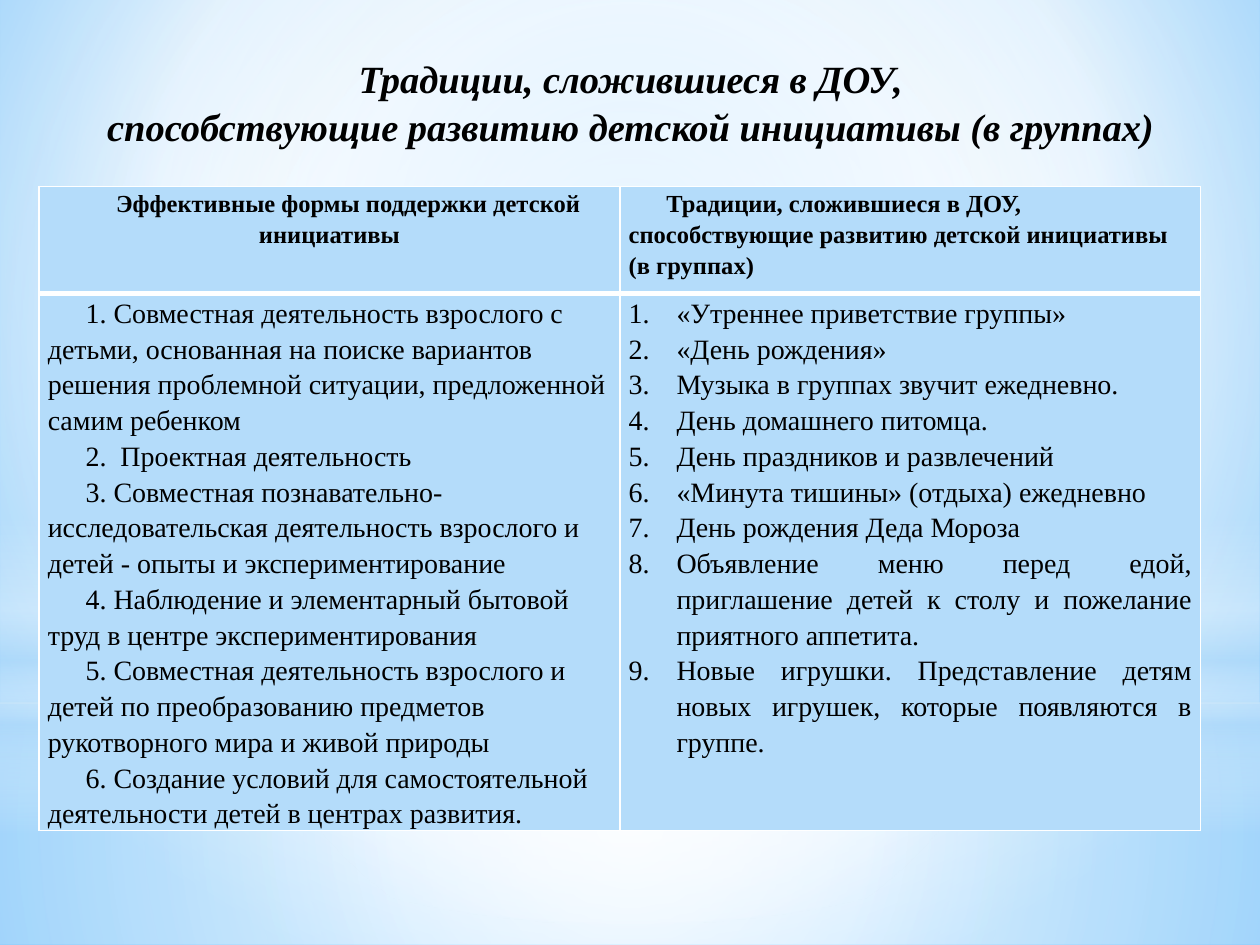
from lxml import etree
from pptx import Presentation
from pptx.dml.color import RGBColor
from pptx.enum import shapes, text
from pptx.oxml import parse_xml
from pptx.oxml.ns import nsdecls, qn
from pptx.util import Inches, Pt

BLACK = RGBColor(0x00, 0x00, 0x00)
WHITE = RGBColor(0xFF, 0xFF, 0xFF)
PALE = RGBColor(0xB4, 0xDC, 0xFA)
SKY = RGBColor(0x9E, 0xD5, 0xFF)
BLUE = RGBColor(0x5B, 0xB9, 0xFF)
FONT = "Times New Roman"
AL = text.PP_ALIGN
CENTER = (50, 50, 50, 50)

TITLE = ["Традиции, сложившиеся в ДОУ,",
         "способствующие развитию детской инициативы (в группах)"]
HEADS = ["Эффективные формы поддержки детской инициативы",
         "Традиции, сложившиеся в ДОУ, способствующие развитию детской "
         "инициативы (в группах)"]
FORMS = [
    "1. Совместная деятельность взрослого с детьми, основанная на поиске вариантов "
    "решения проблемной ситуации, предложенной самим ребенком",
    "2.  Проектная деятельность",
    "3. Совместная познавательно-исследовательская деятельность взрослого и детей "
    "- опыты и экспериментирование",
    "4. Наблюдение и элементарный бытовой труд в центре экспериментирования",
    "5. Совместная деятельность взрослого и детей по преобразованию предметов "
    "рукотворного мира и живой природы",
    "6. Создание условий для самостоятельной деятельности детей в центрах развития.",
]
TRADITIONS = [
    "«Утреннее приветствие группы»",
    "«День рождения»",
    "Музыка в группах звучит ежедневно.",
    "День домашнего питомца.",
    "День праздников и развлечений",
    "«Минута тишины» (отдыха) ежедневно",
    "День рождения Деда Мороза",
    "Объявление меню перед едой, приглашение детей к столу и пожелание приятного аппетита.",
    "Новые игрушки. Представление детям новых игрушек, которые появляются в группе.",
]


def set_all(obj, values):
    for name, value in values.items():
        setattr(obj, name, value)


def gradient(stops, center=None):
    """Gradient of (position, colour, opacity) in percent; linear downwards without a center."""
    gs = "".join(
        f'<a:gs pos="{pos * 1000}"><a:srgbClr val="{color}">'
        f'<a:alpha val="{alpha * 1000}"/></a:srgbClr></a:gs>'
        for pos, color, alpha in stops)
    if center:
        sides = " ".join(f'{k}="{v * 1000}"' for k, v in zip("ltrb", center))
        way = f'<a:path path="circle"><a:fillToRect {sides}/></a:path>'
    else:
        way = '<a:lin ang="5400000" scaled="0"/>'
    return parse_xml(f'<a:gradFill {nsdecls("a")} rotWithShape="1">'
                     f'<a:gsLst>{gs}</a:gsLst>{way}</a:gradFill>')


def swap_solid(parent, grad):
    solid = parent.find(".//" + qn("a:solidFill"))
    solid.getparent().replace(solid, grad)


def add_glow(s, kind, box, grad):
    sp = s.shapes.add_shape(kind, *map(Inches, box))
    sp.shadow.inherit = False
    sp.line.fill.background()
    sp.fill.solid()
    swap_solid(sp.fill._xPr, grad)


def add_backdrop(s, w, h):
    fill = s.background.fill
    fill.solid()
    swap_solid(s.background._cSld,
               gradient([(0, SKY, 100), (60, WHITE, 100), (100, BLUE, 100)],
                        (20, 10, 20, 60)))
    rect, oval = shapes.MSO_SHAPE.RECTANGLE, shapes.MSO_SHAPE.OVAL
    split = 5.58
    add_glow(s, rect, (0, split, w, h - split),
             gradient([(0, WHITE, 91), (37, WHITE, 76), (100, PALE, 79)], CENTER))
    add_glow(s, rect, (0, 0, w, split),
             gradient([(0, WHITE, 89), (48, WHITE, 62), (100, PALE, 79)], CENTER))
    add_glow(s, rect, (0, 4.12, w, 2.5),
             gradient([(0, WHITE, 0), (29, WHITE, 30), (45, PALE, 40),
                       (55, WHITE, 26), (65, PALE, 60), (100, WHITE, 0)]))
    add_glow(s, oval, (0, 1.75, w, split),
             gradient([(0, WHITE, 100), (56, WHITE, 0)], CENTER))


def write(tf, lines, font, para, margin=0, indent=0, numbered=False):
    for i, line in enumerate(lines):
        p = tf.paragraphs[0] if i == 0 else tf.add_paragraph()
        set_all(p, para)
        pPr = p._p.get_or_add_pPr()
        pPr.set("marL", str(Inches(margin)))
        pPr.set("indent", str(Inches(indent)))
        if numbered:
            etree.SubElement(pPr, qn("a:buAutoNum"), type="arabicPeriod")
        r = p.add_run()
        r.text = line
        set_all(r.font, {"name": FONT, **font})
        r.font.color.rgb = BLACK


def add_title(s, box):
    tf = s.shapes.add_textbox(*map(Inches, box)).text_frame
    tf.word_wrap = True
    write(tf, TITLE, {"size": Pt(22), "bold": True, "italic": True},
          {"alignment": AL.CENTER, "space_before": Pt(0.9)}, margin=0.01)


def set_borders(cell, widths):
    tcPr = cell._tc.get_or_add_tcPr()
    for i, (side, width) in enumerate(zip("LRTB", widths)):
        tcPr.insert(i, parse_xml(
            f'<a:ln{side} {nsdecls("a")} w="{Pt(width)}"><a:solidFill>'
            f'<a:srgbClr val="{WHITE}"/></a:solidFill></a:ln{side}>'))


def add_table(s, box, head_height):
    left, top, width, height = box
    table = s.shapes.add_table(2, 2, *map(Inches, box)).table
    table.horz_banding = False
    for col in table.columns:
        col.width = Inches(width / 2)
    for row, row_height in zip(table.rows, (head_height, height - head_height)):
        row.height = Inches(row_height)

    head = {"size": Pt(14), "bold": True}
    body = {"size": Pt(16), "bold": False}
    plain = {"margin": 0, "indent": 0.3}
    items = {"margin": 0.38, "indent": -0.38, "numbered": True}
    cells = [
        (0, 0, HEADS[:1], head, AL.CENTER, plain),
        (0, 1, HEADS[1:], head, AL.LEFT, plain),
        (1, 0, FORMS, body, AL.LEFT, plain),
        (1, 1, TRADITIONS, body, AL.JUSTIFY, items),
    ]
    for row, col, lines, font, align, layout in cells:
        cell = table.cell(row, col)
        set_all(cell, {"margin_left": Inches(0.07), "margin_right": Inches(0.07),
                       "margin_top": 0, "margin_bottom": 0})
        cell.fill.solid()
        cell.fill.fore_color.rgb = PALE
        set_borders(cell, (1, 1, 1, 3) if row == 0 else (1, 1, 3, 1))
        write(cell.text_frame, lines, font,
              {"alignment": align, "line_spacing": 1.15}, **layout)


def main():
    prs = Presentation()
    prs.slide_width, prs.slide_height = Inches(10), Inches(7.5)
    s = prs.slides.add_slide(prs.slide_layouts[6])
    add_backdrop(s, 10, 7.5)
    add_table(s, (0.31, 1.48, 9.22, 5.11), 0.85)
    add_title(s, (0.31, 0.39, 9.38, 0.86))
    prs.save("out.pptx")


if __name__ == "__main__":
    main()
